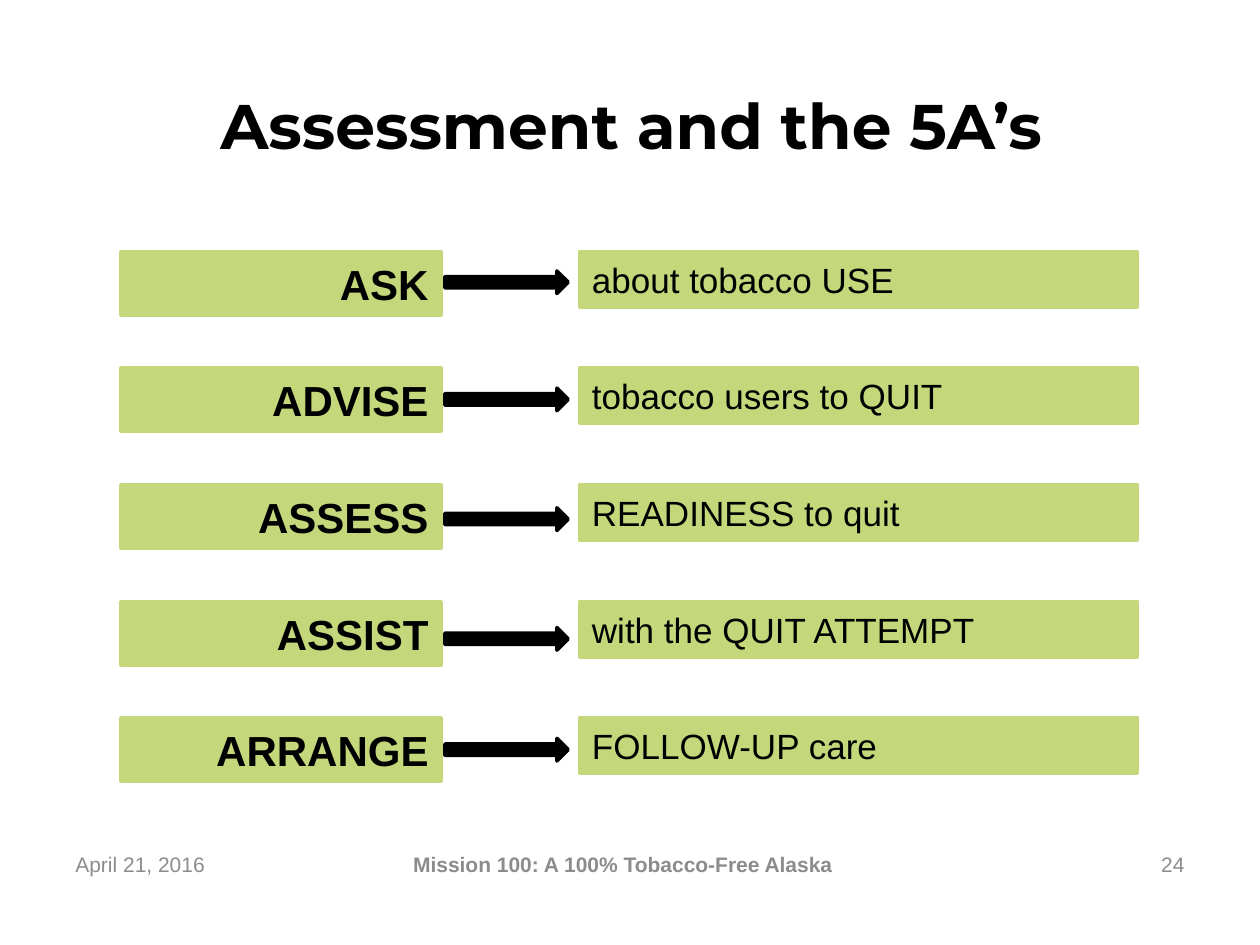
from pptx import Presentation
from pptx.dml.color import RGBColor
from pptx.enum.shapes import MSO_SHAPE
from pptx.enum.text import MSO_ANCHOR, PP_ALIGN
from pptx.util import Pt

PX = 9144
RECT, ARROW = MSO_SHAPE.RECTANGLE, MSO_SHAPE.RIGHT_ARROW
TOP, MIDDLE = MSO_ANCHOR.TOP, MSO_ANCHOR.MIDDLE
LEFT, CENTER, RIGHT = PP_ALIGN.LEFT, PP_ALIGN.CENTER, PP_ALIGN.RIGHT
COLORS = {"ink": "000000", "green": "C4D87B", "gray": "8C8C8C"}
STEPS = [
    ("ASK", "about tobacco USE", 24),
    ("ADVISE", "tobacco users to QUIT", 25),
    ("ASSESS", "READINESS to quit", 27),
    ("ASSIST", "with the QUIT ATTEMPT", 29),
    ("ARRANGE", "FOLLOW-UP care", 25),
]


def color(name):
    return RGBColor.from_string(COLORS[name])


def scale(*box):
    return [n * PX for n in box]


def write(shape, text, size, align, anchor=MIDDLE, bold=False, ink="ink", face="Arial"):
    frame = shape.text_frame
    frame.word_wrap = True
    frame.vertical_anchor = anchor
    para = frame.paragraphs[0]
    para.alignment = align
    run = para.add_run()
    run.text = text
    for key, value in {"size": Pt(size), "bold": bold, "name": face}.items():
        setattr(run.font, key, value)
    run.font.color.rgb = color(ink)


def block(slide, kind, box, tint):
    shape = slide.shapes.add_shape(kind, *scale(*box))
    shape.shadow.inherit = False
    shape.fill.solid()
    shape.fill.fore_color.rgb = color(tint)
    shape.line.color.rgb = color(tint)
    shape.line.width = Pt(2)
    return shape


def title(slide, box, text):
    shape = slide.shapes.title
    sides = zip(("left", "top", "width", "height"), scale(*box))
    for key, value in sides:
        setattr(shape, key, value)
    write(shape, text, 36, CENTER, bold=True, face="Montserrat")


def step(slide, box, name, task, mid):
    x, y, w, h = box
    label = block(slide, RECT, (x, y, 254, h), "green")
    write(label, name, 24, RIGHT, TOP, bold=True)
    detail = block(slide, RECT, (x + 364, y, w - 364, h - 6), "green")
    write(detail, task, 20, LEFT, TOP)
    block(slide, ARROW, (x + 257, y + mid - 9, 98, 18), "ink")


def steps(slide, box):
    x, y, w, h = box
    tall = 50
    for i, (name, task, mid) in enumerate(STEPS):
        top = y + round((h - tall) * i / (len(STEPS) - 1))
        step(slide, (x, top, w, tall), name, task, mid)


def footer(slide, box):
    x, y, w, h = box
    parts = [
        (x, 233, "April 21, 2016", LEFT, False),
        (x + 233, 423, "Mission 100: A 100% Tobacco-Free Alaska", CENTER, True),
        (x + w - 233, 233, "24", RIGHT, False),
    ]
    for left, wide, text, align, bold in parts:
        shape = slide.shapes.add_textbox(*scale(left, y, wide, h))
        write(shape, text, 12, align, bold=bold, ink="gray")


def main():
    deck = Presentation()
    deck.slide_width, deck.slide_height = scale(1000, 750)
    slide = deck.slides.add_slide(deck.slide_layouts[5])
    title(slide, (61, 40, 880, 118), "Assessment and the 5A’s")
    steps(slide, (96, 200, 807, 420))
    footer(slide, (50, 666, 900, 40))
    deck.save("out.pptx")


if __name__ == "__main__":
    main()
